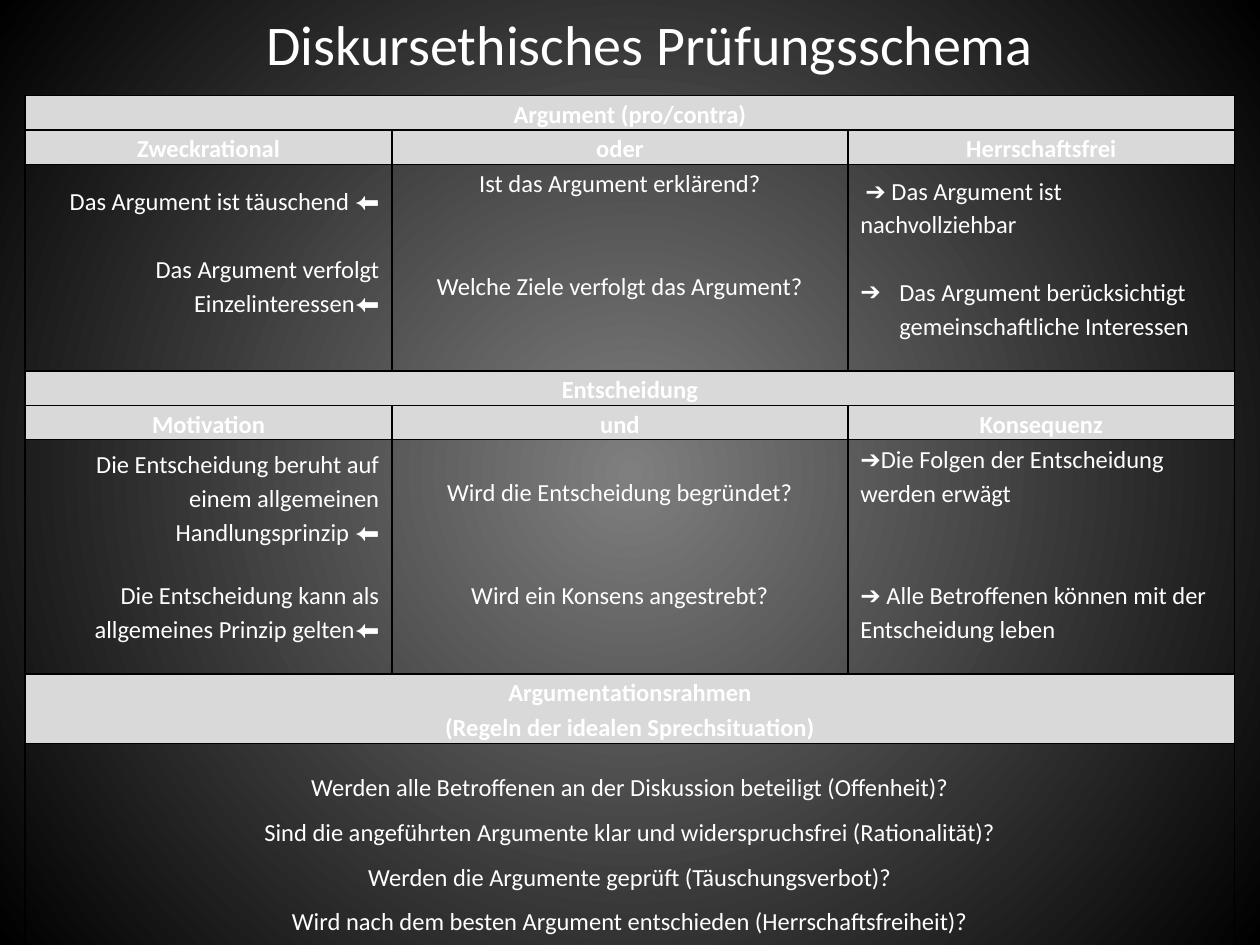
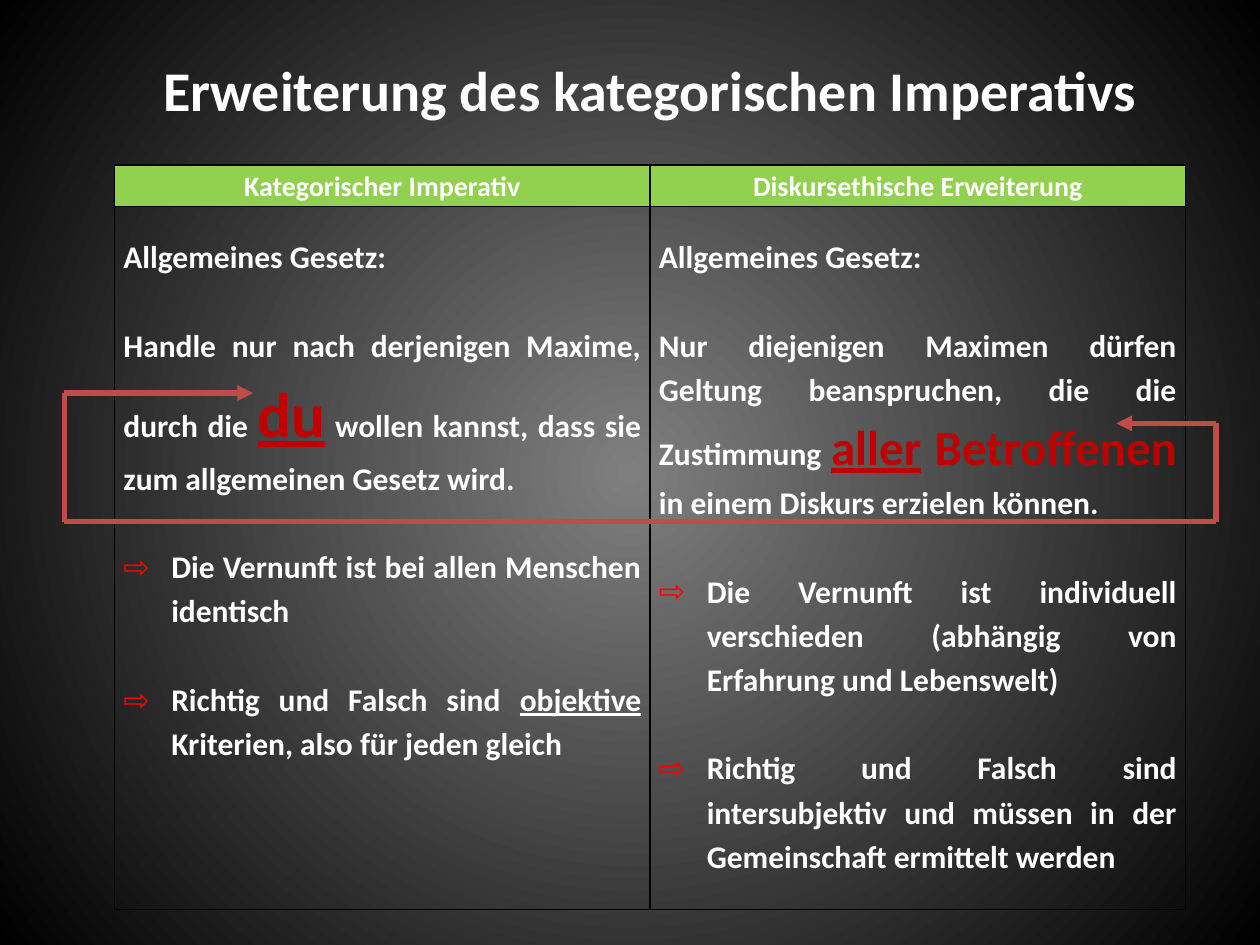
from dataclasses import dataclass

from lxml import etree
from pptx import Presentation
from pptx.dml.color import RGBColor
from pptx.enum.shapes import MSO_CONNECTOR
from pptx.enum.text import MSO_ANCHOR, MSO_AUTO_SIZE, PP_ALIGN
from pptx.oxml.ns import qn
from pptx.util import Inches, Pt

LEFT, CENTER, RIGHT, JUSTIFY = PP_ALIGN.LEFT, PP_ALIGN.CENTER, PP_ALIGN.RIGHT, PP_ALIGN.JUSTIFY
MIDDLE, STRAIGHT, NO_FIT = MSO_ANCHOR.MIDDLE, MSO_CONNECTOR.STRAIGHT, MSO_AUTO_SIZE.NONE
TITLE_ONLY = 5


@dataclass(frozen=True)
class Theme:
    font: str = "Calibri"
    text: str = "FFFFFF"
    glow: str = "7F7F7F"
    edge: str = "000000"
    gray_band: str = "D9D9D9"
    green_band: str = "92D050"
    emphasis: str = "C00000"
    bullet: str = "FF0000"
    loop: str = "BF4C48"
    title_size: int = 32
    scheme_size: int = 14
    head_size: int = 16
    law_size: int = 18
    spacing: float = 1.15


THEME = Theme()
LINE_14 = 19.6  # height of one text line at 14 pt
LINE_18 = 25.3  # height of one text line at 18 pt


@dataclass(frozen=True)
class Span:
    text: str
    size: int = THEME.law_size
    color: str = THEME.text
    underline: bool = False


@dataclass(frozen=True)
class Para:
    content: str | tuple[Span, ...] = ""
    align: PP_ALIGN = CENTER
    size: int = THEME.scheme_size
    bold: bool = False
    before: float = 0
    spacing: float = THEME.spacing
    bullet: str = ""
    bullet_color: str = THEME.text
    indent: float = 0
    first: float = 0


@dataclass(frozen=True)
class Cell:
    paras: tuple[Para, ...] = (Para(),)
    fill: str = ""
    top: float = 0
    span: int = 1


@dataclass(frozen=True)
class Note:
    left: float
    top: float
    width: float
    height: float
    paras: tuple[Para, ...]


# Shared text helpers
def style_font(font, size: int, bold: bool, color: str = THEME.text, underline: bool = False) -> None:
    font.name, font.size, font.bold = THEME.font, Pt(size), bold
    font.color.rgb = RGBColor.from_string(color)
    if underline:
        font.underline = True


def add_bullet(properties, para: Para) -> None:
    color = etree.SubElement(properties, qn("a:buClr"))
    etree.SubElement(color, qn("a:srgbClr"), val=para.bullet_color)
    etree.SubElement(properties, qn("a:buFont"), typeface=THEME.font)
    etree.SubElement(properties, qn("a:buChar"), char=para.bullet)


def write_paras(frame, paras: tuple[Para, ...]) -> None:
    for index, para in enumerate(paras):
        paragraph = frame.add_paragraph() if index else frame.paragraphs[0]
        paragraph.alignment = para.align
        paragraph.line_spacing = para.spacing
        paragraph.space_before = Pt(para.before)
        properties = paragraph._p.get_or_add_pPr()
        properties.set("marL", str(Inches(para.indent)))
        properties.set("indent", str(Inches(para.first)))
        if para.bullet:
            add_bullet(properties, para)
        if isinstance(para.content, str):
            paragraph.text = para.content
            style_font(paragraph.font, para.size, para.bold)
            continue
        for span in para.content:
            run = paragraph.add_run()
            run.text = span.text
            style_font(run.font, span.size, para.bold, span.color, span.underline)


# Shared slide parts
def add_page(deck, title: str, top: float, height: float, bold: bool = False):
    page = deck.slides.add_slide(deck.slide_layouts[TITLE_ONLY])
    fill = page.background.fill
    fill.gradient()
    for stop, color in zip(fill.gradient_stops, (THEME.glow, THEME.edge)):
        stop.color.rgb = RGBColor.from_string(color)
    linear = next(page.element.iter(qn("a:lin")))
    radial = etree.Element(qn("a:path"), path="circle")
    etree.SubElement(radial, qn("a:fillToRect"), l="50000", t="50000", r="50000", b="50000")
    linear.getparent().replace(linear, radial)

    box = page.shapes.title
    box.left, box.top, box.width, box.height = map(Inches, (0.91, top, 8.5, height))
    frame = box.text_frame
    frame.vertical_anchor, frame.auto_size, frame.word_wrap = MIDDLE, NO_FIT, True
    write_paras(frame, (Para(title, size=THEME.title_size, bold=bold, spacing=1.0),))
    return page


def add_borders(cell) -> None:
    properties = cell._tc.get_or_add_tcPr()
    for side in ("lnL", "lnR", "lnT", "lnB"):
        line = etree.SubElement(properties, qn(f"a:{side}"), w=str(Pt(1)))
        fill = etree.SubElement(line, qn("a:solidFill"))
        etree.SubElement(fill, qn("a:srgbClr"), val=THEME.edge)


def add_grid(page, left: float, top: float, columns: tuple[float, ...],
             heights: tuple[float, ...], rows: tuple[tuple[Cell, ...], ...], inset: float) -> None:
    table = page.shapes.add_table(len(heights), len(columns), Inches(left), Inches(top),
                                  Inches(sum(columns)), Inches(sum(heights))).table
    table.first_row = table.horz_banding = False
    for column, width in zip(table.columns, columns):
        column.width = Inches(width)
    for row_index, (height, row) in enumerate(zip(heights, rows)):
        table.rows[row_index].height = Inches(height)
        if row[0].span > 1:
            table.cell(row_index, 0).merge(table.cell(row_index, row[0].span - 1))
            row += (Cell(fill=row[0].fill),) * (row[0].span - 1)
        for column_index, content in enumerate(row):
            cell = table.cell(row_index, column_index)
            cell.margin_left = cell.margin_right = Inches(inset)
            cell.margin_top, cell.margin_bottom = Inches(content.top), 0
            add_borders(cell)
            if content.fill:
                cell.fill.solid()
                cell.fill.fore_color.rgb = RGBColor.from_string(content.fill)
            else:
                cell.fill.background()
            write_paras(cell.text_frame, content.paras)


def add_note(page, note: Note) -> None:
    box = page.shapes.add_textbox(*map(Inches, (note.left, note.top, note.width, note.height)))
    box.text_frame.word_wrap = True
    write_paras(box.text_frame, note.paras)


def add_loop_line(group, start: tuple[float, float], end: tuple[float, float], arrow: bool) -> None:
    connector = group.shapes.add_connector(STRAIGHT, *map(Inches, start + end))
    connector.line.color.rgb = RGBColor.from_string(THEME.loop)
    connector.line.width = Pt(3)
    properties = connector._element.spPr
    if arrow:
        etree.SubElement(properties.find(qn("a:ln")), qn("a:tailEnd"), type="triangle")
    etree.SubElement(properties, qn("a:effectLst"))


# Slide 1: test scheme
def gray_head(*lines: str, span: int = 1) -> Cell:
    return Cell(tuple(Para(line, bold=True) for line in lines), THEME.gray_band, span=span)


def questions(first: str, second: str, top: float = 0) -> Cell:
    return Cell((Para(first), Para(second, before=2 * LINE_14)), top=top)


def build_scheme(deck) -> None:
    page = add_page(deck, "Diskursethisches Prüfungsschema", 0.01, 0.67)
    columns = (2.91, 3.62, 3.07)
    frame_questions = (
        "Werden alle Betroffenen an der Diskussion beteiligt (Offenheit)?",
        "Sind die angeführten Argumente klar und widerspruchsfrei (Rationalität)?",
        "Werden die Argumente geprüft (Täuschungsverbot)?",
        "Wird nach dem besten Argument entschieden (Herrschaftsfreiheit)?",
    )
    rows = (
        (gray_head("Argument (pro/contra)", span=3),),
        tuple(map(gray_head, ("Zweckrational", "oder", "Herrschaftsfrei"))),
        (Cell(), questions("Ist das Argument erklärend?", "Welche Ziele verfolgt das Argument?"), Cell()),
        (gray_head("Entscheidung", span=3),),
        tuple(map(gray_head, ("Motivation", "und", "Konsequenz"))),
        (Cell(), questions("Wird die Entscheidung begründet?", "Wird ein Konsens angestrebt?", 0.27), Cell()),
        (gray_head("Argumentationsrahmen", "(Regeln der idealen Sprechsituation)", span=3),),
        (Cell(tuple(Para(text, spacing=1.5 if index else 1.0)
                    for index, text in enumerate(frame_questions)), top=0.24, span=3),),
    )
    heights = (0.27, 0.27, 1.64, 0.27, 0.27, 1.86, 0.55, 1.61)
    add_grid(page, 0.2, 0.76, columns, heights, rows, inset=0.06)

    # Answers beside the questions
    left, right = 0.2, 0.2 + columns[0] + columns[1]
    notes = (
        Note(left, 1.39, columns[0], 1.18, (
            Para("Das Argument ist täuschend ⬅", RIGHT),
            Para("Das Argument verfolgt Einzelinteressen⬅", RIGHT, before=LINE_14))),
        Note(right, 1.31, columns[2], 1.46, (
            Para("➔ Das Argument ist nachvollziehbar", LEFT, first=0.04),
            Para("Das Argument berücksichtigt gemeinschaftliche Interessen", LEFT,
                 before=LINE_14, bullet="➔", indent=0.31, first=-0.31))),
        Note(left, 3.48, columns[0], 1.69, (
            Para("Die Entscheidung beruht auf einem allgemeinen Handlungsprinzip ⬅", RIGHT),
            Para("Die Entscheidung kann als allgemeines Prinzip gelten⬅", RIGHT, before=17))),
        Note(right, 3.44, columns[2], 1.72, (
            Para("➔Die Folgen der Entscheidung werden erwägt", LEFT),
            Para("➔ Alle Betroffenen können mit der Entscheidung leben", LEFT, before=39))),
    )
    for note in notes:
        add_note(page, note)


# Slide 2: extended imperative
def law_para(content: str | tuple[Span, ...], before: float = LINE_18) -> Para:
    return Para(content, JUSTIFY, THEME.law_size, True, before)


def law_cell(law: tuple[Span, ...], *conclusions: str | tuple[Span, ...]) -> Cell:
    bullets = tuple(Para(text, JUSTIFY, THEME.law_size, True, LINE_18, bullet="⇨",
                         bullet_color=THEME.bullet, indent=0.38, first=-0.38)
                    for text in conclusions)
    return Cell((law_para("Allgemeines Gesetz:", 0), law_para(law)) + bullets, top=0.21)


def build_imperative(deck) -> None:
    page = add_page(deck, "Erweiterung des kategorischen Imperativs", 0.21, 0.99, bold=True)
    heads = tuple(Cell((Para(text, size=THEME.head_size, bold=True),), THEME.green_band)
                  for text in ("Kategorischer Imperativ", "Diskursethische Erweiterung"))
    categorical = law_cell(
        (Span("Handle nur nach derjenigen Maxime, durch die "),
         Span("du", 36, THEME.emphasis, True),
         Span(" wollen kannst, dass sie zum allgemeinen Gesetz wird.")),
        "Die Vernunft ist bei allen Menschen identisch",
        (Span("Richtig und Falsch sind "), Span("objektive", underline=True),
         Span(" Kriterien, also für jeden gleich")))
    discursive = law_cell(
        (Span("Nur diejenigen Maximen dürfen Geltung beanspruchen, die die Zustimmung "),
         Span("aller", 28, THEME.emphasis, True),
         Span(" Betroffenen ", 28, THEME.emphasis),
         Span("in einem Diskurs erzielen können.")),
        "Die Vernunft ist individuell verschieden (abhängig von Erfahrung und Lebenswelt)",
        "Richtig und Falsch sind intersubjektiv und müssen in der Gemeinschaft ermittelt werden")
    add_grid(page, 0.91, 1.31, (4.25, 4.25), (0.33, 5.58), (heads, (categorical, discursive)), inset=0.07)

    # Loop joining the two highlighted words, with an arrow at each end
    left, right, bottom = 0.51, 9.65, 4.14
    left_top, right_top = (left, 3.12), (right, 3.36)
    group = page.shapes.add_group_shape()
    for start, end, arrow in (
        (left_top, (2.01, 3.12), True),
        (left_top, (left, bottom), False),
        ((left, bottom), (right, bottom), False),
        (right_top, (right, bottom), False),
        (right_top, (8.86, 3.36), True),
    ):
        add_loop_line(group, start, end, arrow)


def main() -> None:
    deck = Presentation()
    deck.slide_width, deck.slide_height = Inches(10), Inches(7.5)
    build_scheme(deck)
    build_imperative(deck)
    deck.save("out.pptx")


if __name__ == "__main__":
    main()
